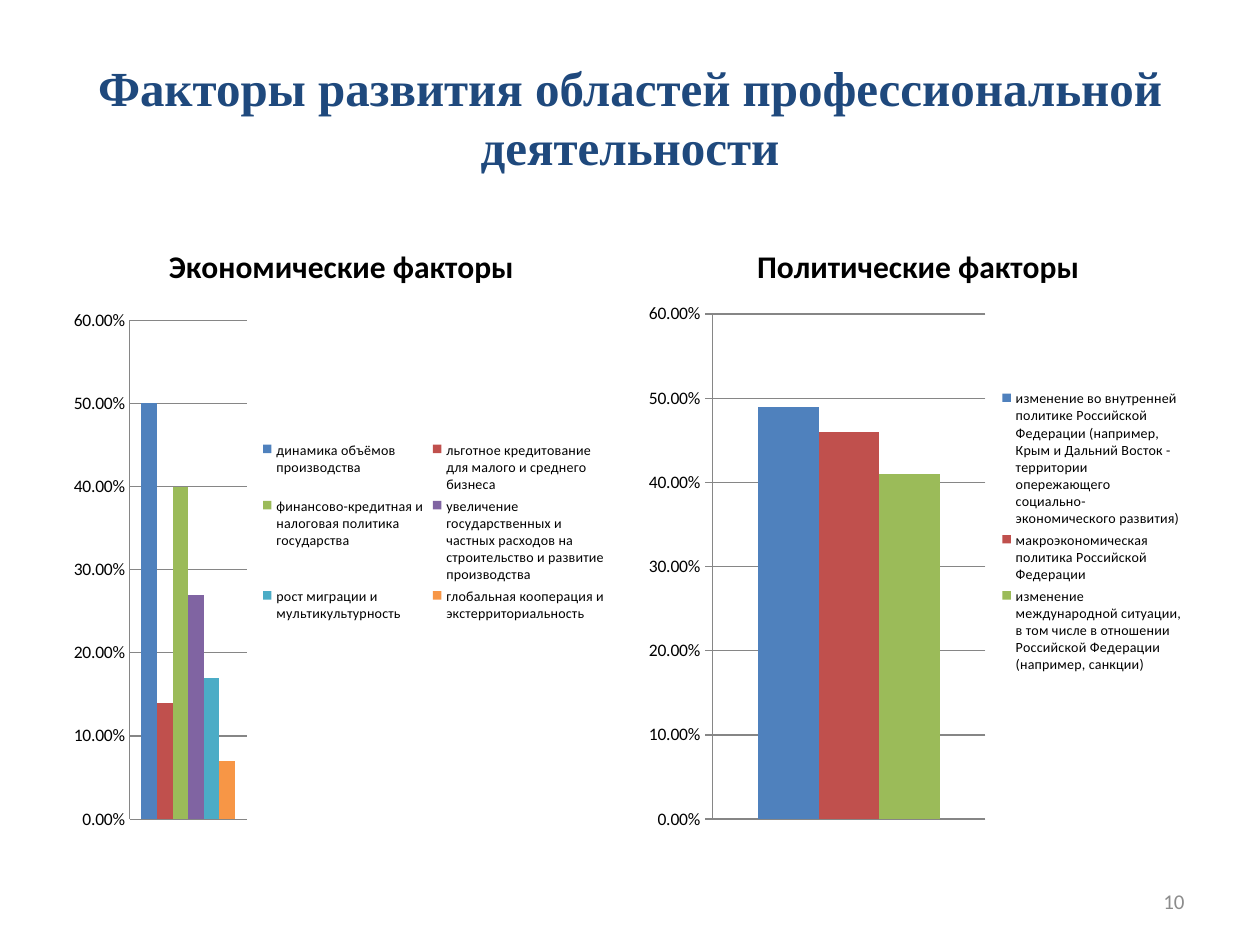
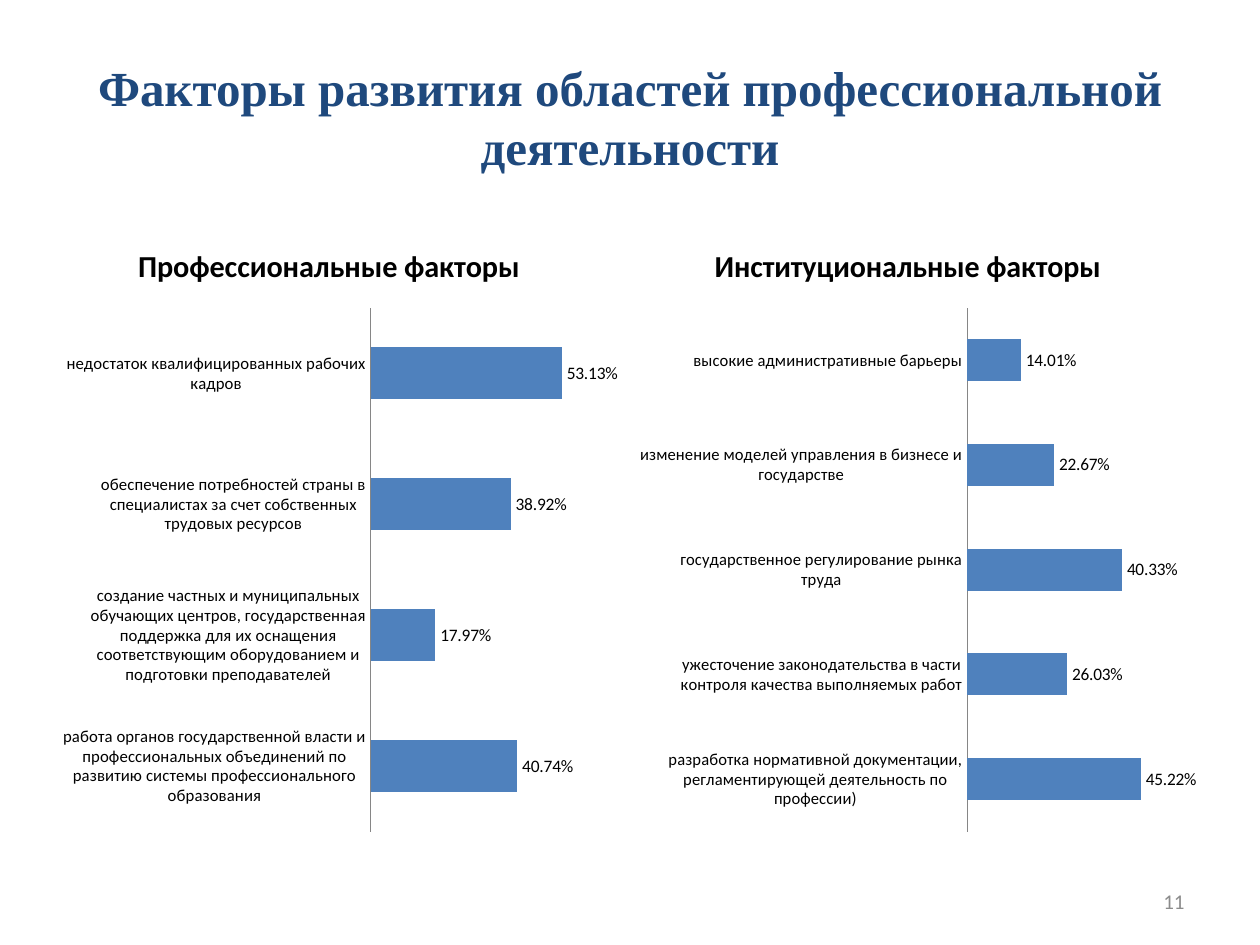
from lxml import etree
from pptx import Presentation
from pptx.chart.data import CategoryChartData
from pptx.dml.color import RGBColor
from pptx.enum.chart import XL_CHART_TYPE, XL_LABEL_POSITION, XL_LEGEND_POSITION, XL_TICK_MARK
from pptx.enum.text import MSO_ANCHOR, PP_ALIGN
from pptx.oxml.ns import qn
from pptx.util import Inches, Pt

COLUMN, BAR = XL_CHART_TYPE.COLUMN_CLUSTERED, XL_CHART_TYPE.BAR_CLUSTERED
NO_TICK, TICK_OUT = XL_TICK_MARK.NONE, XL_TICK_MARK.OUTSIDE
PERCENT = "0.00%"
AXIS_GREY = "868686"
PALETTE = ["4F81BD", "C0504D", "9BBB59", "8064A2", "4BACC6", "F79646"]

# Text formats
TITLE_FONT = {"name": "Times New Roman", "size": Pt(28), "bold": True, "color": "1F497D"}
NUMBER_FONT = {"name": "Calibri", "size": Pt(12), "color": "8C8C8C"}
CHART_FONT = {"name": "Calibri", "size": Pt(10), "color": "000000"}
CHART_TITLE_FONT = {"name": "Calibri", "size": Pt(18), "bold": True, "color": "000000"}
LEGEND_FONT = {"name": "Calibri", "size": Pt(8), "color": "000000"}
BAR_NAME_FONT = {**CHART_FONT, "size": Pt(9.6)}
BAR_TITLE_FONT = {**CHART_TITLE_FONT, "size": Pt(17.4)}

# Content: "frame" is x, y, width, height of the plot as shares of the chart
TITLE = "Факторы развития областей профессиональной деятельности"
SLIDES = [
    (10, [
        {"kind": COLUMN, "title": "Экономические факторы", "title_at": (0.18, 0.03),
         "frame": (0.12, 0.16, 0.21, 0.8), "tick": NO_TICK, "top": 0.6,
         "data": [
             ("динамика объёмов производства", 0.5),
             ("льготное кредитование для малого и среднего бизнеса", 0.14),
             ("финансово-кредитная и налоговая политика государства", 0.4),
             ("увеличение государственных и частных расходов на строительство "
              "и развитие производства", 0.27),
             ("рост миграции и мультикультурность", 0.17),
             ("глобальная кооперация и экстерриториальность", 0.07)]},
        {"kind": COLUMN, "title": "Политические факторы", "title_at": (0.2, 0.03),
         "frame": (0.13, 0.15, 0.49, 0.81), "tick": TICK_OUT, "top": 0.6,
         "data": [
             ("изменение во внутренней политике Российской Федерации (например, Крым "
              "и Дальний Восток - территории опережающего "
              "социально-экономического развития)", 0.49),
             ("макроэкономическая политика Российской Федерации", 0.46),
             ("изменение международной ситуации, в том числе в отношении "
              "Российской Федерации (например, санкции)", 0.41)]},
    ]),
    (11, [
        {"kind": BAR, "title": "Профессиональные факторы", "title_at": (0.12, 0.03),
         "frame": (0.55, 0.14, 0.39, 0.84), "tick": NO_TICK, "top": 0.6,
         "data": [
             ("работа органов государственной власти и профессиональных объединений "
              "по развитию системы профессионального образования", 0.4074),
             ("создание частных и муниципальных обучающих центров, государственная "
              "поддержка для их оснащения соответствующим оборудованием "
              "и подготовки преподавателей", 0.1797),
             ("обеспечение потребностей страны в специалистах за счет собственных "
              "трудовых ресурсов", 0.3892),
             ("недостаток квалифицированных рабочих кадров", 0.5313)]},
        {"kind": BAR, "title": "Институциональные факторы", "title_at": (0.12, 0.03),
         "frame": (0.59, 0.14, 0.35, 0.84), "tick": NO_TICK, "top": 0.5,
         "data": [
             ("разработка нормативной документации, регламентирующей деятельность "
              "по профессии)", 0.4522),
             ("ужесточение законодательства в части контроля качества "
              "выполняемых работ", 0.2603),
             ("государственное регулирование рынка труда", 0.4033),
             ("изменение моделей управления в бизнесе и государстве", 0.2267),
             ("высокие административные барьеры", 0.1401)]},
    ]),
]

# Page geometry in inches
MARGIN, PAGE_WIDTH, GAP = 0.5, 10, 0.16
CHART_TOP, CHART_HEIGHT = 1.75, 4.95
CHART_WIDTH = (PAGE_WIDTH - 2 * MARGIN - GAP) / 2


def rgb(code):
    return RGBColor.from_string(code)


def set_font(font, formats):
    for key, value in formats.items():
        if key == "color":
            font.color.rgb = rgb(value)
        else:
            setattr(font, key, value)


def place(part, shares, inner=False):
    """Give a chart part a fixed position, as shares of the chart."""
    for old in part.findall(qn("c:layout")):
        part.remove(old)
    layout = etree.Element(qn("c:layout"))
    manual = etree.SubElement(layout, qn("c:manualLayout"))
    settings = [("layoutTarget", "inner")] if inner else []
    settings += [("xMode", "edge"), ("yMode", "edge")]
    settings += zip("xywh", shares)
    for tag, value in settings:
        etree.SubElement(manual, qn("c:" + tag)).set("val", str(value))
    overlay = part.find(qn("c:overlay"))
    if overlay is None:
        part.insert(0, layout)
    else:
        overlay.addprevious(layout)


def add_text(box, text, alignment, formats):
    frame = box.text_frame
    frame.word_wrap = True
    frame.vertical_anchor = MSO_ANCHOR.MIDDLE
    para = frame.paragraphs[0]
    para.alignment = alignment
    span = para.add_run()
    span.text = text
    set_font(span.font, formats)


def chart_data(item):
    """Columns are one series per factor; bars are one category per factor."""
    data = CategoryChartData(number_format=PERCENT)
    names, values = zip(*item["data"])
    if item["kind"] == COLUMN:
        data.categories = ["1"]
        for name, value in item["data"]:
            data.add_series(name, [value])
    else:
        data.categories = names
        data.add_series("Series 1", values)
    return data


def add_factor_chart(page, item, left):
    chart = page.shapes.add_chart(
        item["kind"], Inches(left), Inches(CHART_TOP), Inches(CHART_WIDTH),
        Inches(CHART_HEIGHT), chart_data(item)).chart
    columns = item["kind"] == COLUMN
    set_font(chart.font, CHART_FONT)

    # Title
    chart.has_title = True
    para = chart.chart_title.text_frame.paragraphs[0]
    span = para.add_run()
    span.text = item["title"]
    set_font(span.font, CHART_TITLE_FONT if columns else BAR_TITLE_FONT)
    place(chart.element.xpath("c:chart/c:title")[0], item["title_at"])

    # Axes
    categories, values = chart.category_axis, chart.value_axis
    categories.visible, values.visible = not columns, columns
    values.has_major_gridlines = columns
    values.minimum_scale, values.maximum_scale = 0, item["top"]
    values.major_unit = 0.1
    values.tick_labels.number_format = PERCENT
    values.tick_labels.number_format_is_linked = False
    shown = values if columns else categories
    shown.major_tick_mark = item["tick"]
    lines = [shown.format.line]
    if columns:
        lines.append(values.major_gridlines.format.line)
    for line in lines:
        line.color.rgb = rgb(AXIS_GREY)
        line.width = Pt(0.75)

    # Bars
    plot = chart.plots[0]
    plot.gap_width = 150
    plot.vary_by_categories = False
    for series, color in zip(plot.series, PALETTE):
        series.format.fill.solid()
        series.format.fill.fore_color.rgb = rgb(color)
    place(chart.element.xpath("c:chart/c:plotArea")[0], item["frame"], inner=True)

    # Legend or value labels
    chart.has_legend = columns
    if columns:
        chart.legend.position = XL_LEGEND_POSITION.RIGHT
        chart.legend.include_in_layout = False
        set_font(chart.legend.font, LEGEND_FONT)
    else:
        set_font(categories.tick_labels.font, BAR_NAME_FONT)
        plot.has_data_labels = True
        labels = plot.data_labels
        labels.show_value = True
        labels.number_format = PERCENT
        labels.number_format_is_linked = False
        labels.position = XL_LABEL_POSITION.OUTSIDE_END
        set_font(labels.font, CHART_FONT)


def add_page(deck, number, charts):
    page = deck.slides.add_slide(deck.slide_layouts[5])
    title = page.shapes.title
    title.left, title.top, title.width, title.height = map(Inches, (MARGIN, 0.3, 9, 1.25))
    add_text(title, TITLE, PP_ALIGN.CENTER, TITLE_FONT)
    number_box = page.shapes.add_textbox(*map(Inches, (7.17, 6.95, 2.33, 0.4)))
    add_text(number_box, str(number), PP_ALIGN.RIGHT, NUMBER_FONT)
    for column, item in enumerate(charts):
        add_factor_chart(page, item, MARGIN + column * (CHART_WIDTH + GAP))


def main():
    deck = Presentation()
    deck.slide_width, deck.slide_height = Inches(PAGE_WIDTH), Inches(7.5)
    for number, charts in SLIDES:
        add_page(deck, number, charts)
    deck.save("out.pptx")


if __name__ == "__main__":
    main()
